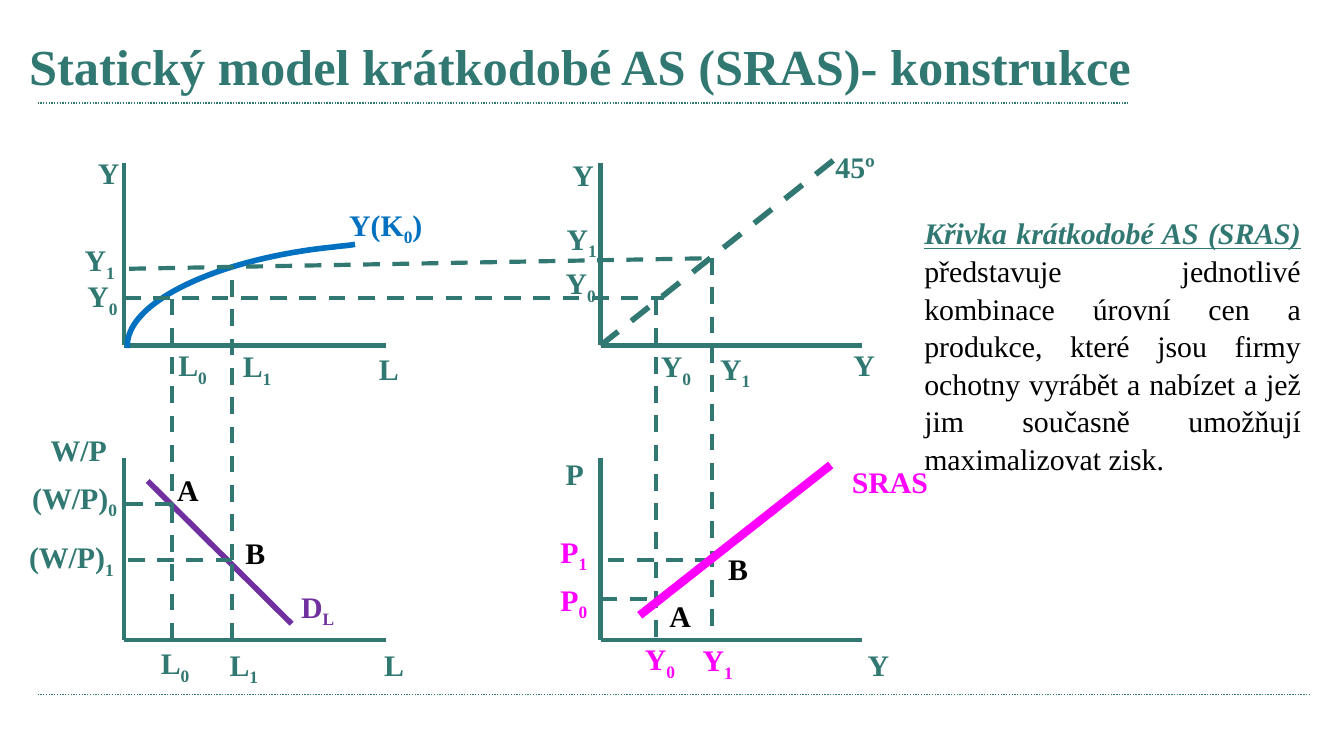
from lxml.etree import SubElement as Sub
from pptx import Presentation as Deck
from pptx.dml.color import RGBColor as Rgb
from pptx.enum.dml import MSO_LINE_DASH_STYLE as Dash
from pptx.enum.shapes import MSO_CONNECTOR as Conn
from pptx.enum.text import MSO_ANCHOR as Anchor, MSO_AUTO_SIZE as Auto, PP_ALIGN as Align
from pptx.oxml.ns import qn
from pptx.util import Cm, Pt

HUES = {"teal": "307871", "blue": "0070C0", "plum": "7030A0",
        "pink": "FF00FF", "black": "000000"}
FONT = "Times New Roman"

LEFT, RIGHT, WIDE = 2.34, 11.35, 4.95
TOP, LOW, TALL = 6.53, 12.09, 3.44
L0, L1, Y0, Y1 = 3.25, 4.39, 12.4, 13.46
OUT0, OUT1, OUT2 = 5.64, 5.08, 4.88
WAGE0, WAGE1, PRICE0 = 9.53, 10.59, 11.33

GUIDES = [
    (L1, LOW, L1, WAGE1), (L1, WAGE1, LEFT, WAGE1), (L1, WAGE1, L1, 5.05),
    (2.44, OUT1, Y1, OUT2), (Y1, OUT2, Y1, LOW), (Y1, WAGE1, RIGHT, WAGE1),
    (L0, LOW, L0, WAGE0), (L0, WAGE0, LEFT, WAGE0), (L0, 9.83, L0, OUT0),
    (LEFT, OUT0, 12.55, OUT0), (Y0, OUT0, Y0, LOW), (RIGHT, PRICE0, Y0, PRICE0),
]

LABELS = [
    ("Y", 1.6, 2.79, "teal"), ("Y_1", 1.35, 4.45, "teal"), ("Y_0", 1.4, 5.13, "teal"),
    ("L_0", 3.12, 6.43, "teal"), ("L_1", 4.34, 6.45, "teal"), ("L", 6.91, 6.5, "teal"),
    ("Y(K_0_)", 6.35, 3.78, "blue"),
    ("Y", 10.57, 2.84, "teal"), ("Y_1", 10.46, 4.04, "teal"), ("Y_0", 10.44, 4.88, "teal"),
    ("Y_0", 12.24, 6.45, "teal"), ("Y_1", 13.36, 6.5, "teal"), ("Y", 15.88, 6.43, "teal"),
    ("45º", 15.54, 2.69, "teal"),
    ("W/P", 0.71, 8.03, "teal"), ("(W/P)_0", 0.36, 8.94, "teal"),
    ("(W/P)_1", 0.3, 10.06, "teal"), ("L_0", 2.79, 12.07, "teal"),
    ("L_1", 4.09, 12.09, "teal"), ("L", 7.01, 12.09, "teal"), ("D_L", 5.44, 11, "plum"),
    ("A", 3.1, 8.79, "black"), ("B", 4.39, 9.98, "black"),
    ("P", 10.44, 8.48, "teal"), ("P_1", 10.34, 9.96, "pink"), ("P_0", 10.34, 10.87, "pink"),
    ("Y_0", 11.94, 11.99, "pink"), ("Y_1", 13.03, 12.01, "pink"), ("Y", 16.15, 12.09, "teal"),
    ("SRAS", 15.85, 8.64, "pink"),
    ("A", 12.4, 11.18, "black"), ("B", 13.51, 10.29, "black"),
]


def add_run(para, text, size=16, hue="teal", bold=True, slant=False, under=False, sub=False):
    run = para.add_run()
    run.text = text
    font = run.font
    font.name, font.size, font.bold = FONT, Pt(size), bold
    font.italic, font.underline = slant, under
    font.color.rgb = Rgb.from_string(HUES[hue])
    if sub:
        run._r.get_or_add_rPr().set("baseline", "-25000")


def add_box(slide, x, y, wide, tall, wrap=True):
    box = slide.shapes.add_textbox(Cm(x), Cm(y), Cm(wide), Cm(tall))
    box.text_frame.word_wrap = wrap
    return box.text_frame


def add_label(slide, text, x, y, hue):
    parts = text.split("_")
    wide = 0.95 + 0.25 * len(text)
    frame = add_box(slide, x, y, wide, 0.94, wrap=False)
    frame.auto_size = Auto.SHAPE_TO_FIT_TEXT
    for spot, part in enumerate(parts):
        if part:
            add_run(frame.paragraphs[0], part, hue=hue, sub=spot % 2 == 1)


def add_line(slide, ends, hue="teal", width=2.25, dash=None):
    line = slide.shapes.add_connector(Conn.STRAIGHT, *[Cm(end) for end in ends])
    line.line.color.rgb = Rgb.from_string(HUES[hue])
    line.line.width = Pt(width)
    if dash:
        line.line.dash_style = dash
    Sub(line._element.spPr, qn("a:effectLst"))


def add_axes(slide, x, y):
    add_line(slide, (x, y - TALL, x, y))
    add_line(slide, (x, y, x + WIDE, y))


def bezier(knots, steps):
    for step in range(1, steps + 1):
        t = step / steps
        mix = ((1 - t) ** 3, 3 * t * (1 - t) ** 2, 3 * t * t * (1 - t), t ** 3)
        yield tuple(Cm(sum(m * k[axis] for m, k in zip(mix, knots))) for axis in (0, 1))


def add_curve(slide):
    start, join = (6.71, 4.62), (6.3, 4.67)
    dots = [*bezier([start, (6.55, 4.65), (6.43, 4.65), join], 4),
            *bezier([join, (4.06, 4.9), (2.34, 5.74), (2.41, 6.58)], 40)]
    pen = slide.shapes.build_freeform(Cm(start[0]), Cm(start[1]))
    pen.add_line_segments(dots, close=False)
    curve = pen.convert_to_shape()
    curve.shadow.inherit = False
    curve.fill.background()
    curve.line.color.rgb = Rgb.from_string(HUES["blue"])
    curve.line.width = Pt(3)


def add_title(slide):
    frame = add_box(slide, 0.3, 0.53, 21.6, 1.42)
    frame.vertical_anchor = Anchor.MIDDLE
    add_run(frame.paragraphs[0], "Statický model krátkodobé AS (SRAS)- konstrukce", size=27)


def add_note(slide):
    para = add_box(slide, 17.22, 3.91, 7.62, 5.05).paragraphs[0]
    para.alignment = Align.JUSTIFY
    para.line_spacing = 1.05
    add_run(para, "Křivka krátkodobé AS (SRAS)", slant=True, under=True)
    add_run(para, " představuje jednotlivé kombinace úrovní cen a produkce, "
            "které jsou firmy ochotny vyrábět a nabízet a jež jim současně "
            "umožňují maximalizovat zisk.", hue="black", bold=False)


def main():
    deck = Deck()
    deck.slide_width, deck.slide_height = Cm(25.4), Cm(14.29)
    slide = deck.slides.add_slide(deck.slide_layouts[6])
    for y, end in ((1.95, 21.31), (13.13, 24.77)):
        add_line(slide, (0.71, y, end, y), width=0.75, dash=Dash.ROUND_DOT)
    add_title(slide)
    for y in (TOP, LOW):
        for x in (LEFT, RIGHT):
            add_axes(slide, x, y)
    add_curve(slide)
    add_line(slide, (2.79, 9.09, 5.51, 11.79), hue="plum", width=3)
    add_line(slide, (RIGHT, TOP, 15.85, 2.95), width=3, dash=Dash.DASH)
    for ends in GUIDES:
        add_line(slide, ends, dash=Dash.DASH)
    add_line(slide, (12.09, 11.63, 15.7, 8.79), hue="pink", width=4.5)
    for label in LABELS:
        add_label(slide, *label)
    add_note(slide)
    deck.save("out.pptx")


if __name__ == "__main__":
    main()
